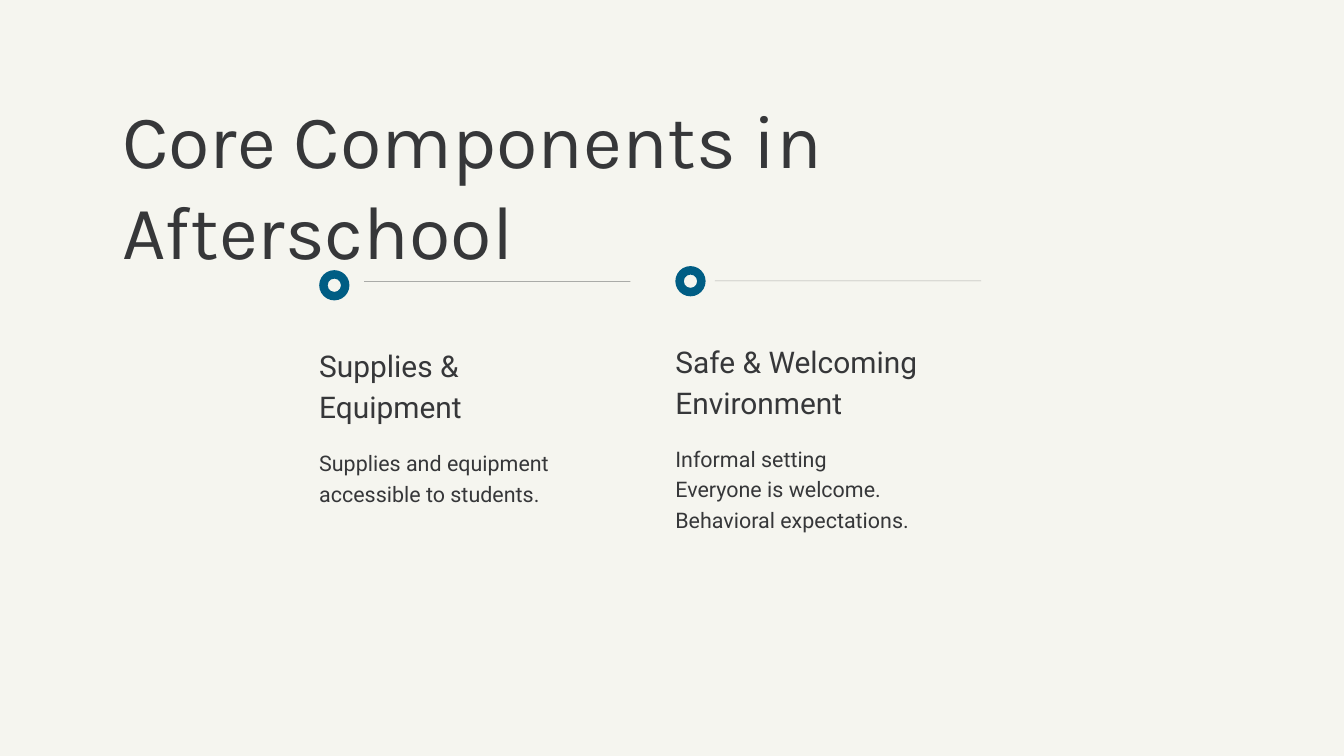
import dataclasses
import typing

import lxml.etree
import pptx
import pptx.dml.color
import pptx.enum.shapes
import pptx.enum.text
import pptx.oxml.ns
import pptx.util

Inches = pptx.util.Inches
Pt = pptx.util.Pt
qn = pptx.oxml.ns.qn
INK = "363739"
BLUE = "005D84"
PAPER = "F5F5EF"
RING = 0.45
WIDE = 3.68


@dataclasses.dataclass
class Topic:
    left: float
    top: float
    rule_x: float
    rule_y: float
    head: str
    body: str


TOPICS = [
    Topic(4.75, 4.02, 5.42, 4.19, "Supplies & Equipment",
          "Supplies and equipment accessible to students."),
    Topic(10.05, 3.96, 10.64, 4.18, "Safe & Welcoming Environment",
          "Informal setting\nEveryone is welcome.\nBehavioral expectations."),
]


def paint(target: typing.Any, code: str) -> None:
    target.rgb = pptx.dml.color.RGBColor.from_string(code)


def set_text(shape: typing.Any, text: str, face: str, size: float, pitch: float) -> None:
    frame = shape.text_frame
    frame.word_wrap = True
    frame.auto_size = pptx.enum.text.MSO_AUTO_SIZE.NONE
    frame.vertical_anchor = pptx.enum.text.MSO_ANCHOR.TOP
    frame.margin_left = frame.margin_right = 0
    frame.margin_top = frame.margin_bottom = 0
    frame.text = text
    for para in frame.paragraphs:
        para.alignment = pptx.enum.text.PP_ALIGN.LEFT
        para.line_spacing = Pt(pitch)
        para.space_before = Pt(0)
        for run in para.runs:
            run.font.name = face
            run.font.size = Pt(size)
            paint(run.font.color, INK)


def add_text(slide: typing.Any, left: float, top: float, high: float,
             text: str, size: float, pitch: float) -> None:
    box = slide.shapes.add_textbox(Inches(left), Inches(top), Inches(WIDE), Inches(high))
    set_text(box, text, "Roboto", size, pitch)


def add_ring(slide: typing.Any, left: float, top: float) -> None:
    ring = slide.shapes.add_shape(pptx.enum.shapes.MSO_SHAPE.DONUT, Inches(left),
                                  Inches(top), Inches(RING), Inches(RING))
    ring.adjustments[0] = 0.28
    ring.shadow.inherit = False
    ring.fill.solid()
    paint(ring.fill.fore_color, BLUE)
    ring.line.fill.background()


def add_rule(slide: typing.Any, left: float, top: float) -> None:
    rule = slide.shapes.add_connector(
        pptx.enum.shapes.MSO_CONNECTOR.STRAIGHT,
        Inches(left), Inches(top), Inches(left + 3.96), Inches(top))
    rule.line.width = Pt(0.75)
    paint(rule.line.color, INK)
    props = rule._element.spPr
    tint = props.find(".//" + qn("a:srgbClr"))
    lxml.etree.SubElement(tint, qn("a:alpha"), val="39000")
    lxml.etree.SubElement(props, qn("a:effectLst"))


def add_topic(slide: typing.Any, topic: Topic) -> None:
    add_rule(slide, topic.rule_x, topic.rule_y)
    add_ring(slide, topic.left, topic.top)
    add_text(slide, topic.left, topic.top + 1.06, 1.21, topic.head, 32, 44.8)
    lines = topic.body.count("\n") + 1
    add_text(slide, topic.left, topic.top + 2.62, max(0.86, lines * 0.43), topic.body, 23, 32.2)


def main() -> None:
    deck = pptx.Presentation()
    deck.slide_width = Inches(20)
    deck.slide_height = Inches(11.25)
    slide = deck.slides.add_slide(deck.slide_layouts[5])
    slide.background.fill.solid()
    paint(slide.background.fill.fore_color, PAPER)

    title = slide.shapes.title
    title.left, title.top = Inches(1.82), Inches(1.38)
    title.width, title.height = Inches(16), Inches(1.34)
    set_text(title, "Core Components in Afterschool", "Karla", 81, 97.2)

    for topic in TOPICS:
        add_topic(slide, topic)
    deck.save("out.pptx")


if __name__ == "__main__":
    main()
